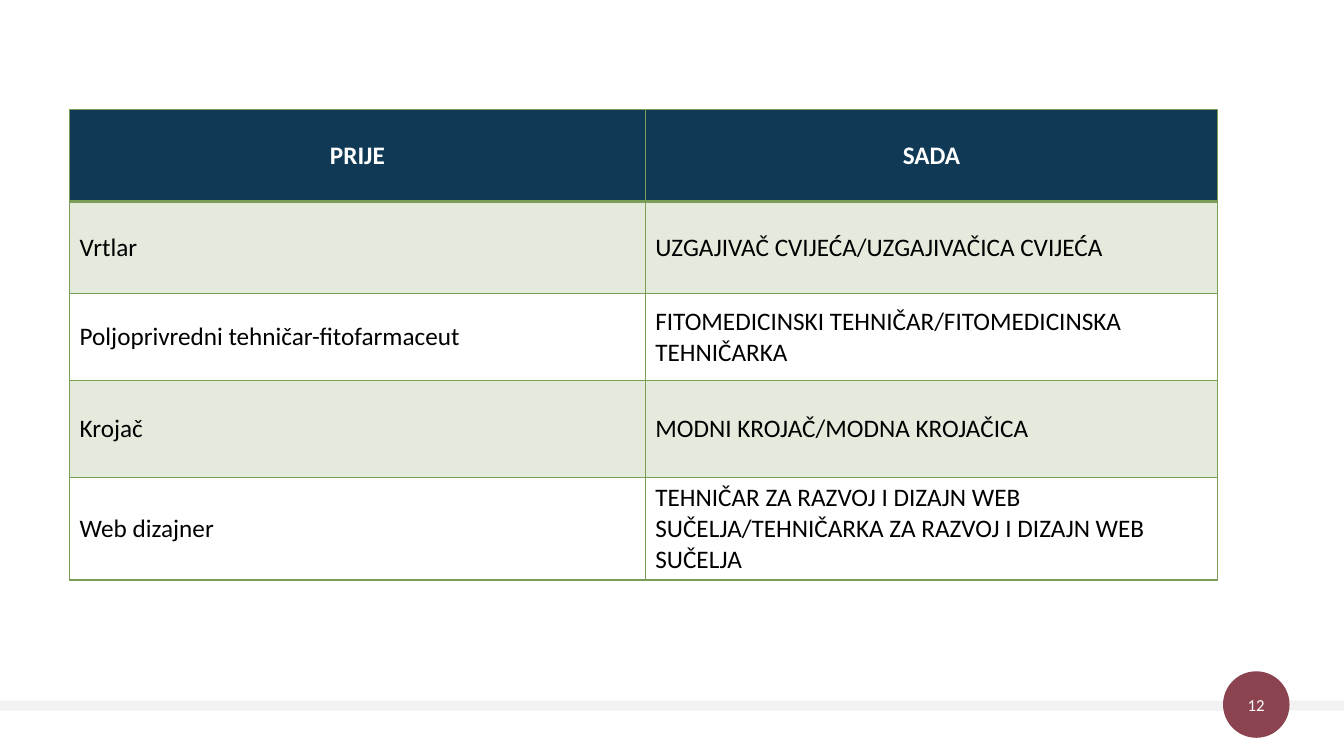
import dataclasses
import typing

import pptx
import pptx.dml.color
import pptx.enum.shapes
import pptx.enum.text
import pptx.oxml
import pptx.oxml.ns
import pptx.util

SHAPES = pptx.enum.shapes.MSO_SHAPE
ALIGN = pptx.enum.text.PP_ALIGN
PAGE_WIDTH = pptx.util.Inches(13.33)
PAGE_HEIGHT = pptx.util.Inches(7.5)


@dataclasses.dataclass(frozen=True)
class Theme:
    font: str = "Calibri"
    navy: str = "0F3955"
    green: str = "7A9E56"
    wine: str = "8A434F"
    band: str = "F2F2F2"
    white: str = "FFFFFF"
    black: str = "000000"
    table_size: int = 18
    number_size: int = 12
    thin_line: int = 1
    header_line: int = 2
    stripe_opacity: int = 20


@dataclasses.dataclass(frozen=True)
class Area:
    """A rectangle in percent of the page width and height."""
    left: float
    top: float
    width: float
    height: float


@dataclasses.dataclass(frozen=True)
class Occupation:
    before: str
    now: str
    height: float


THEME = Theme()
FOOTER_BAND = Area(0, 92.67, 100, 1.33)
NUMBER_DISC = Area(91, 88.8, 4.95, 8.8)
TABLE_LEFT, TABLE_TOP = 5.18, 14.53
COLUMN_WIDTHS = (42.83, 42.6)
OCCUPATIONS = (
    Occupation("PRIJE", "SADA", 12.13),
    Occupation("Vrtlar", "UZGAJIVAČ CVIJEĆA/UZGAJIVAČICA CVIJEĆA", 12.13),
    Occupation("Poljoprivredni tehničar-fitofarmaceut",
               "FITOMEDICINSKI TEHNIČAR/FITOMEDICINSKA TEHNIČARKA", 11.6),
    Occupation("Krojač", "MODNI KROJAČ/MODNA KROJAČICA", 12.8),
    Occupation("Web dizajner",
               "TEHNIČAR ZA RAZVOJ I DIZAJN WEB SUČELJA/"
               "TEHNIČARKA ZA RAZVOJ I DIZAJN WEB SUČELJA", 13.33),
)


def across(percent: float) -> int:
    return round(PAGE_WIDTH * percent / 100)


def down(percent: float) -> int:
    return round(PAGE_HEIGHT * percent / 100)


def place(area: Area) -> tuple[int, int, int, int]:
    return across(area.left), down(area.top), across(area.width), down(area.height)


def rgb(colour: str) -> pptx.dml.color.RGBColor:
    return pptx.dml.color.RGBColor.from_string(colour)


def write(frame: typing.Any, text: str, *, size: int, colour: str,
          bold: bool = False, align: typing.Any = ALIGN.LEFT) -> None:
    para = frame.paragraphs[0]
    para.alignment = align
    span = para.add_run()
    span.text = text
    span.font.name = THEME.font
    span.font.size = pptx.util.Pt(size)
    span.font.bold = bold
    span.font.color.rgb = rgb(colour)


def add_plain_shape(page: typing.Any, kind: typing.Any, area: Area, colour: str) -> typing.Any:
    shape = page.shapes.add_shape(kind, *place(area))
    shape.shadow.inherit = False
    shape.fill.solid()
    shape.fill.fore_color.rgb = rgb(colour)
    shape.line.fill.background()
    return shape


def draw_borders(cell: typing.Any, top: int, bottom: int) -> None:
    """Insert the four edges ahead of the cell's fill."""
    properties = cell._tc.get_or_add_tcPr()
    widths = {"L": THEME.thin_line, "R": THEME.thin_line, "T": top, "B": bottom}
    for position, (side, width) in enumerate(widths.items()):
        properties.insert(position, pptx.oxml.parse_xml(
            f'<a:ln{side} {pptx.oxml.ns.nsdecls("a")} w="{pptx.util.Pt(width)}">'
            f'<a:solidFill><a:srgbClr val="{THEME.green}"/></a:solidFill></a:ln{side}>'))


def fill_cell(cell: typing.Any, row: int) -> None:
    """Navy header, then alternating translucent green and clear rows."""
    if row and row % 2 == 0:
        cell.fill.background()
        return
    cell.fill.solid()
    cell.fill.fore_color.rgb = rgb(THEME.green if row else THEME.navy)
    if row:
        colour = cell._tc.tcPr.find(".//" + pptx.oxml.ns.qn("a:srgbClr"))
        colour.append(pptx.oxml.parse_xml(
            f'<a:alpha {pptx.oxml.ns.nsdecls("a")} val="{THEME.stripe_opacity * 1000}"/>'))


def add_occupations(page: typing.Any) -> None:
    area = Area(TABLE_LEFT, TABLE_TOP, sum(COLUMN_WIDTHS),
                sum(occupation.height for occupation in OCCUPATIONS))
    table = page.shapes.add_table(len(OCCUPATIONS), len(COLUMN_WIDTHS), *place(area)).table
    table.horz_banding = False
    for column, width in zip(table.columns, COLUMN_WIDTHS):
        column.width = across(width)
    for row, occupation in enumerate(OCCUPATIONS):
        table.rows[row].height = down(occupation.height)
        header = row == 0
        for column, text in enumerate((occupation.before, occupation.now)):
            cell = table.cell(row, column)
            cell.vertical_anchor = pptx.enum.text.MSO_ANCHOR.MIDDLE
            fill_cell(cell, row)
            draw_borders(cell,
                         top=THEME.header_line if row == 1 else THEME.thin_line,
                         bottom=THEME.header_line if header else THEME.thin_line)
            write(cell.text_frame, text, size=THEME.table_size, bold=header,
                  colour=THEME.white if header else THEME.black,
                  align=ALIGN.CENTER if header else ALIGN.LEFT)


def add_footer(page: typing.Any, number: str) -> None:
    add_plain_shape(page, SHAPES.RECTANGLE, FOOTER_BAND, THEME.band)
    disc = add_plain_shape(page, SHAPES.OVAL, NUMBER_DISC, THEME.wine)
    frame = disc.text_frame
    frame.margin_left = frame.margin_right = frame.margin_top = frame.margin_bottom = 0
    frame.vertical_anchor = pptx.enum.text.MSO_ANCHOR.MIDDLE
    write(frame, number, size=THEME.number_size, colour=THEME.white, align=ALIGN.CENTER)


def main() -> None:
    deck = pptx.Presentation()
    deck.slide_width, deck.slide_height = PAGE_WIDTH, PAGE_HEIGHT
    page = deck.slides.add_slide(deck.slide_layouts[6])
    # Footer band and page number
    add_footer(page, "12")
    # Old and new occupation names
    add_occupations(page)
    deck.save("out.pptx")


if __name__ == "__main__":
    main()
